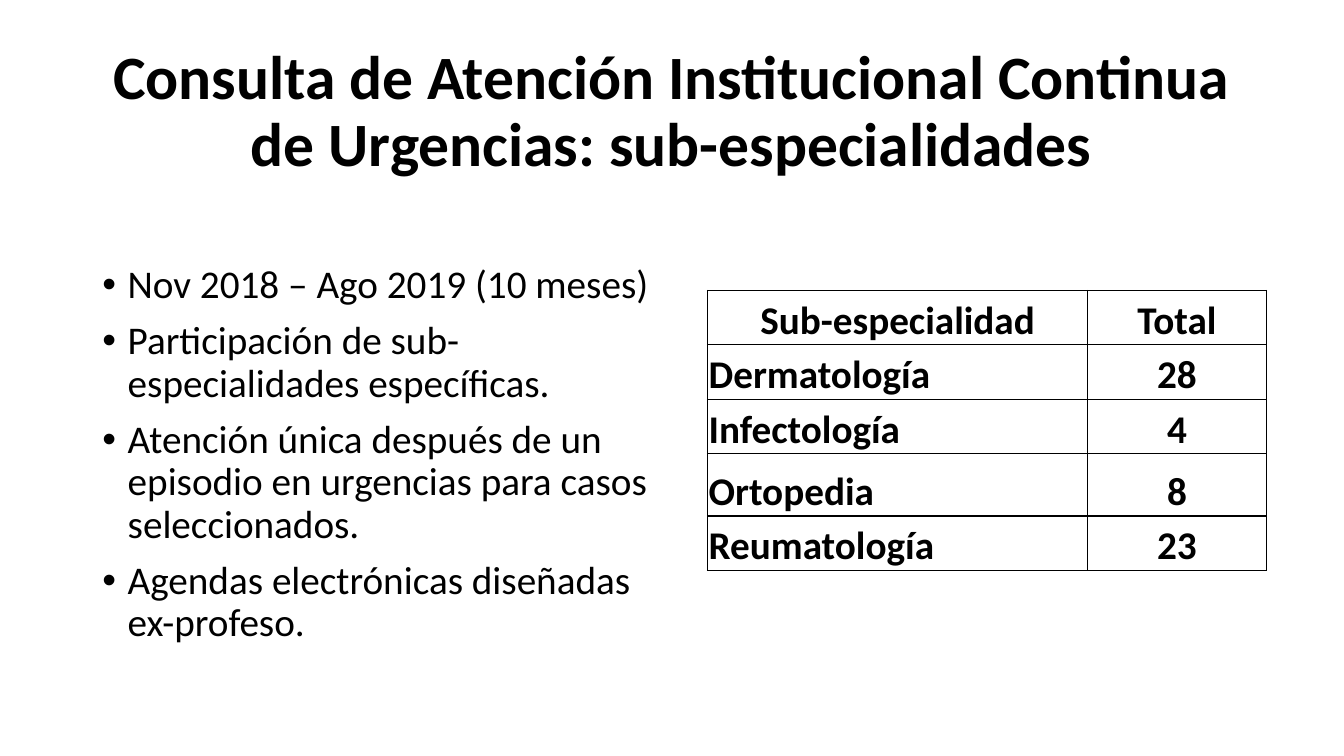
"""Build the slide on sub-specialities in continuous emergency care."""
from lxml.etree import SubElement
from pptx import Presentation
from pptx.dml.color import RGBColor
from pptx.enum.text import MSO_ANCHOR, MSO_AUTO_SIZE, PP_ALIGN
from pptx.oxml.ns import qn
from pptx.util import Cm, Pt

BLACK = RGBColor(0, 0, 0)
FONT = "Calibri"
TITLE = "Consulta de Atención Institucional Continua de Urgencias: sub-especialidades"
POINTS = [
    "Nov 2018 – Ago 2019 (10 meses)",
    "Participación de sub-especialidades específicas.",
    "Atención única después de un episodio en urgencias para casos seleccionados.",
    "Agendas electrónicas diseñadas ex-profeso.",
]
ROWS = [
    ("Sub-especialidad", "Total"),
    ("Dermatología", "28"),
    ("Infectología", "4"),
    ("Ortopedia", "8"),
    ("Reumatología", "23"),
]
WIDTHS = [Cm(9.58), Cm(4.5)]
HEIGHTS = [Cm(1.37), Cm(1.37), Cm(1.37), Cm(1.57), Cm(1.37)]


def write(para, text, size=28, bold=False, align=PP_ALIGN.LEFT, line=None, after=0):
    para.alignment = align
    para.line_spacing = line
    para.space_before = Pt(0)
    para.space_after = Pt(after)
    run = para.add_run()
    run.text = text
    font = run.font
    font.name, font.size, font.bold = FONT, Pt(size), bold
    font.color.rgb = BLACK


def add_bullet(para):
    props = para._p.get_or_add_pPr()
    props.set("marL", str(Cm(0.64)))
    props.set("indent", str(-Cm(0.64)))
    SubElement(props, qn("a:buFont"), typeface="Arial")
    SubElement(props, qn("a:buChar"), char="•")


def add_title(slide):
    title = slide.shapes.title
    title.left, title.top = Cm(2.33), Cm(1.01)
    title.width, title.height = Cm(29.21), Cm(3.68)
    frame = title.text_frame
    frame.auto_size = MSO_AUTO_SIZE.NONE
    frame.vertical_anchor = MSO_ANCHOR.MIDDLE
    write(frame.paragraphs[0], TITLE, size=44, bold=True, align=PP_ALIGN.CENTER, line=0.9)


def add_list(slide):
    box = slide.shapes.add_textbox(Cm(2.33), Cm(5.07), Cm(14.4), Cm(12.09))
    frame = box.text_frame
    frame.word_wrap = True
    frame.margin_top = Cm(1.6)
    for i, text in enumerate(POINTS):
        para = frame.add_paragraph() if i else frame.paragraphs[0]
        write(para, text, line=0.9, after=10)
        add_bullet(para)


def add_edges(cell):
    props = cell._tc.get_or_add_tcPr()
    for side in ("L", "R", "T", "B"):
        edge = SubElement(props, qn(f"a:ln{side}"), w=str(Pt(1)))
        fill = SubElement(edge, qn("a:solidFill"))
        SubElement(fill, qn("a:srgbClr"), val=str(BLACK))


def add_grid(slide):
    frame = slide.shapes.add_table(
        len(ROWS), len(WIDTHS), Cm(17.83), Cm(7.32), sum(WIDTHS), sum(HEIGHTS))
    table = frame.table
    table.first_row = table.horz_banding = False
    for col, width in zip(table.columns, WIDTHS):
        col.width = width
    for r, (row, height) in enumerate(zip(table.rows, HEIGHTS)):
        row.height = height
        for c, cell in enumerate(row.cells):
            cell.vertical_anchor = MSO_ANCHOR.BOTTOM
            cell.margin_left = cell.margin_right = cell.margin_top = Cm(0.03)
            cell.margin_bottom = 0
            add_edges(cell)
            cell.fill.background()
            align = PP_ALIGN.LEFT if r and not c else PP_ALIGN.CENTER
            write(cell.text_frame.paragraphs[0], ROWS[r][c], bold=True, align=align)


def main():
    deck = Presentation()
    deck.slide_width, deck.slide_height = Cm(33.87), Cm(19.05)
    slide = deck.slides.add_slide(deck.slide_layouts[5])
    add_title(slide)
    add_list(slide)
    add_grid(slide)
    deck.save("out.pptx")


if __name__ == "__main__":
    main()
